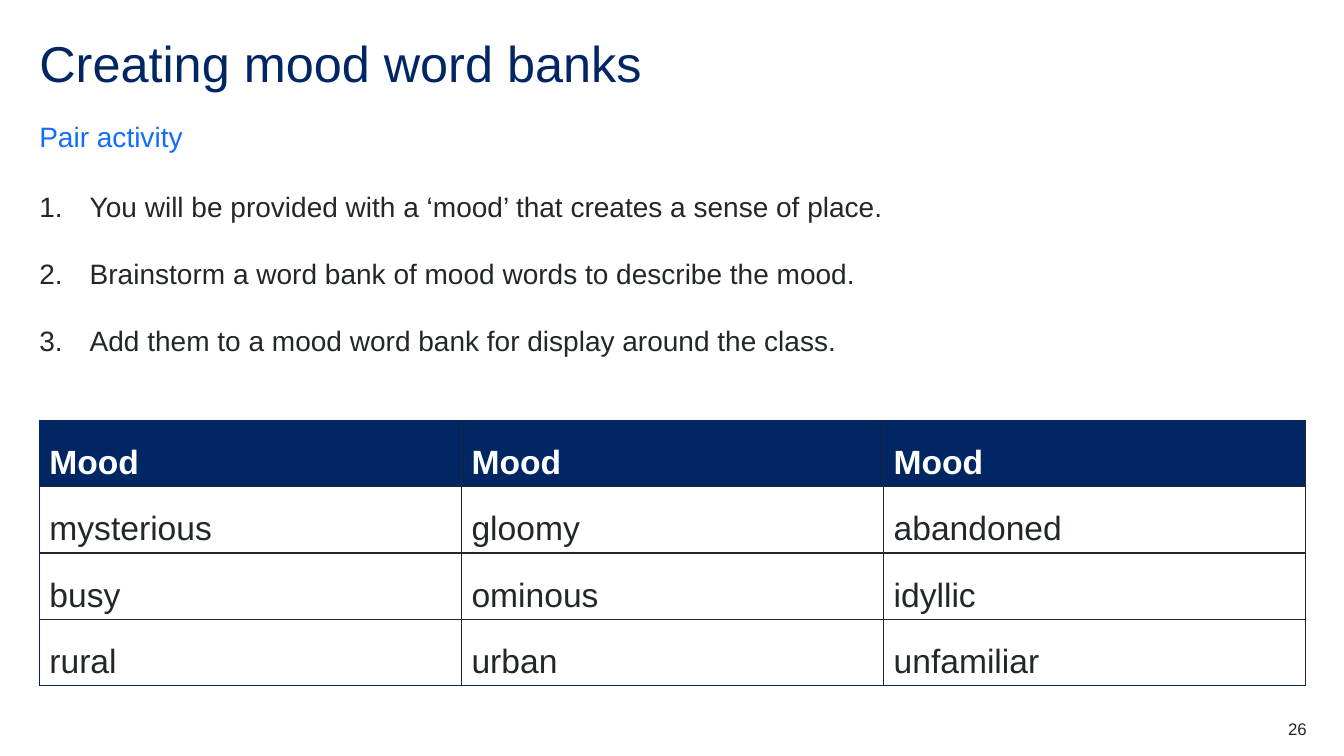
"""Build the "Creating mood word banks" slide."""
from dataclasses import dataclass

from lxml import etree
from pptx import Presentation
from pptx.dml.color import RGBColor
from pptx.enum.text import MSO_ANCHOR, MSO_AUTO_SIZE, PP_ALIGN
from pptx.oxml.ns import qn
from pptx.util import Inches, Pt

LEFT, RIGHT = PP_ALIGN.LEFT, PP_ALIGN.RIGHT
TOP, BOTTOM = MSO_ANCHOR.TOP, MSO_ANCHOR.BOTTOM
NO_FIT = MSO_AUTO_SIZE.NONE
TITLE_ONLY = 5
MARGIN, CONTENT_W = 0.39, 12.56
ROW_H = 0.55


@dataclass(frozen=True)
class Theme:
    font: str = "Arial"
    navy: str = "002664"
    blue: str = "146CFD"
    ink: str = "22272B"
    white: str = "FFFFFF"
    title: int = 36
    table: int = 24
    body: int = 20
    number: int = 12


@dataclass(frozen=True)
class TextStyle:
    size: int
    color: str
    bold: bool = False
    align: PP_ALIGN = LEFT
    line: float = 1.5
    after: int = 12


@dataclass(frozen=True)
class TextBlock:
    left: float
    top: float
    width: float
    height: float
    lines: tuple[str, ...]
    style: TextStyle
    anchor: MSO_ANCHOR = TOP
    numbered: bool = False


THEME = Theme()
TITLE = TextBlock(MARGIN, 0.39, CONTENT_W, 0.6, ("Creating mood word banks",),
                  TextStyle(THEME.title, THEME.navy, line=0.9, after=0))
BLOCKS = (
    TextBlock(MARGIN, 1.13, CONTENT_W, 0.39, ("Pair activity",),
              TextStyle(THEME.body, THEME.blue), anchor=BOTTOM),
    TextBlock(MARGIN, 1.71, CONTENT_W, 2.04, (
        "You will be provided with a ‘mood’ that creates a sense of place.",
        "Brainstorm a word bank of mood words to describe the mood.",
        "Add them to a mood word bank for display around the class.",
    ), TextStyle(THEME.body, THEME.ink), numbered=True),
    TextBlock(12.17, 7.13, 0.79, 0.2, ("26",),
              TextStyle(THEME.number, THEME.ink, align=RIGHT, line=1.0, after=0)),
)
HEADER_STYLE = TextStyle(THEME.table, THEME.white, bold=True)
WORD_STYLE = TextStyle(THEME.table, THEME.ink)
MOODS = (
    ("Mood", "Mood", "Mood"),
    ("mysterious", "gloomy", "abandoned"),
    ("busy", "ominous", "idyllic"),
    ("rural", "urban", "unfamiliar"),
)


def write_line(p, text: str, style: TextStyle) -> None:
    p.alignment = style.align
    p.line_spacing = style.line
    p.space_before = Pt(0)
    p.space_after = Pt(style.after)
    r = p.add_run()
    r.text = text
    r.font.name = THEME.font
    r.font.size = Pt(style.size)
    r.font.bold = style.bold
    r.font.color.rgb = RGBColor.from_string(style.color)


def number_line(p) -> None:
    pPr = p._p.get_or_add_pPr()
    pPr.set("marL", str(Inches(0.5)))
    pPr.set("indent", str(Inches(-0.5)))
    etree.SubElement(pPr, qn("a:buFont"), typeface=THEME.font)
    etree.SubElement(pPr, qn("a:buAutoNum"), type="arabicPeriod")


def fill_block(sp, block: TextBlock) -> None:
    sp.left, sp.top = Inches(block.left), Inches(block.top)
    sp.width, sp.height = Inches(block.width), Inches(block.height)
    tf = sp.text_frame
    tf.word_wrap = True
    tf.auto_size = NO_FIT
    tf.vertical_anchor = block.anchor
    tf.margin_left = tf.margin_right = tf.margin_top = tf.margin_bottom = 0
    for i, line in enumerate(block.lines):
        p = tf.add_paragraph() if i else tf.paragraphs[0]
        write_line(p, line, block.style)
        if block.numbered:
            number_line(p)


def set_borders(cell, outer_sides: dict[str, bool]) -> None:
    tcPr = cell._tc.get_or_add_tcPr()
    for i, (side, outer) in enumerate(outer_sides.items()):
        color, width = (THEME.navy, 0.5) if outer else (THEME.ink, 1)
        ln = etree.Element(qn(f"a:ln{side}"), w=str(Pt(width)))
        fill = etree.SubElement(ln, qn("a:solidFill"))
        etree.SubElement(fill, qn("a:srgbClr"), val=color)
        tcPr.insert(i, ln)


def add_mood_table(s) -> None:
    rows, cols = len(MOODS), len(MOODS[0])
    table = s.shapes.add_table(rows, cols, Inches(MARGIN), Inches(4.17),
                               Inches(CONTENT_W), Inches(ROW_H * rows)).table
    table.horz_banding = False
    for i, words in enumerate(MOODS):
        for j, word in enumerate(words):
            cell = table.cell(i, j)
            cell.fill.solid()
            cell.fill.fore_color.rgb = RGBColor.from_string(
                THEME.white if i else THEME.navy)
            write_line(cell.text_frame.paragraphs[0], word,
                       WORD_STYLE if i else HEADER_STYLE)
            set_borders(cell, {"L": j == 0, "R": False,
                               "T": i == 0, "B": i == rows - 1})


def main() -> None:
    prs = Presentation()
    prs.slide_width, prs.slide_height = Inches(13.33), Inches(7.5)
    s = prs.slides.add_slide(prs.slide_layouts[TITLE_ONLY])
    fill_block(s.shapes.title, TITLE)
    for block in BLOCKS:
        sp = s.shapes.add_textbox(0, 0, 0, 0)
        fill_block(sp, block)
    add_mood_table(s)
    prs.save("out.pptx")


if __name__ == "__main__":
    main()
